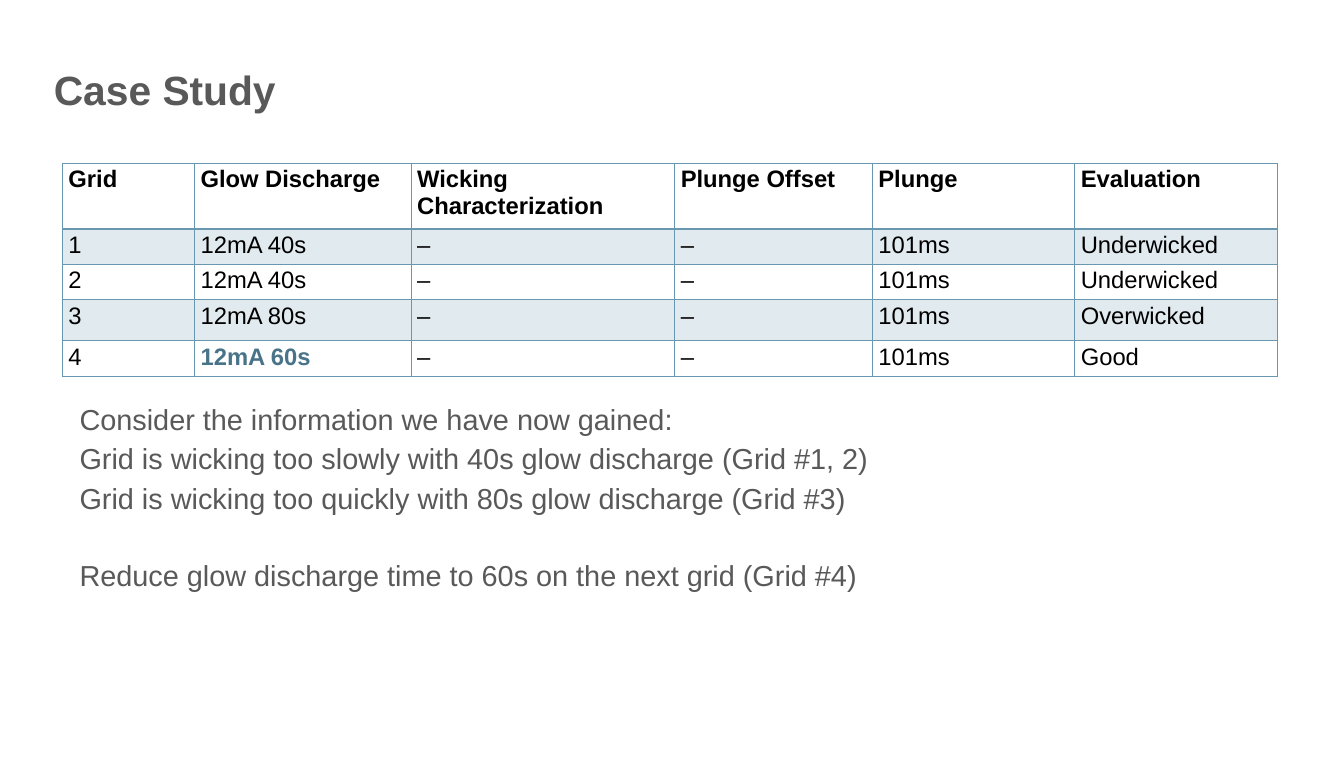
"""Build the case study slide on grid wicking and glow discharge."""
from lxml.etree import SubElement
from pptx import Presentation
from pptx.dml.color import RGBColor
from pptx.enum.text import MSO_ANCHOR
from pptx.oxml.ns import qn
from pptx.util import Pt

COLORS = {"grey": "595959", "black": "000000", "line": "6997AF", "accent": "497389"}
COLUMN_WIDTHS = [155.5, 254.9, 310.3, 232.6, 238.3, 238.3]
ROW_HEIGHTS = [77, 41.8, 41.8, 48.2, 41.8]
HEADINGS = ["Grid", "Glow Discharge", "Wicking Characterization",
            "Plunge Offset", "Plunge", "Evaluation"]
TRIALS = [("12mA 40s", "Underwicked"), ("12mA 40s", "Underwicked"),
          ("12mA 80s", "Overwicked"), ("12mA 60s", "Good")]
FINDINGS = [
    ("Consider the information we have now gained:", 0),
    ("Grid is wicking too slowly with 40s glow discharge (Grid #1, 2)", 9.5),
    ("Grid is wicking too quickly with 80s glow discharge (Grid #3)", 9.5),
    ("Reduce glow discharge time to 60s on the next grid (Grid #4)", 54.2),
]


class Page:
    def __init__(self, deck):
        self.shapes = deck.slides.add_slide(deck.slide_layouts[6]).shapes
        self.font_name = "Arial"

    def style(self, paragraph, size, color, bold=False):
        font = paragraph.font
        font.name, font.size, font.bold = self.font_name, Pt(size), bold
        font.color.rgb = RGBColor.from_string(COLORS[color])

    def text(self, left, top, width, height, lines, size, bold=False,
             anchor=MSO_ANCHOR.TOP, margins=(7.2, 3.6)):
        box = self.shapes.add_textbox(Pt(left), Pt(top), Pt(width), Pt(height))
        frame = box.text_frame
        frame.word_wrap = True
        frame.vertical_anchor = anchor
        frame.margin_left = frame.margin_right = Pt(margins[0])
        frame.margin_top = frame.margin_bottom = Pt(margins[1])
        for index, (words, gap) in enumerate(lines):
            paragraph = frame.add_paragraph() if index else frame.paragraphs[0]
            paragraph.text = words
            paragraph.line_spacing = 0.9
            paragraph.space_before = Pt(gap)
            self.style(paragraph, size, "grey", bold)

    def border(self, cell, side, width):
        line = SubElement(cell._tc.get_or_add_tcPr(), qn(f"a:ln{side}"), w=str(Pt(width)))
        fill = SubElement(line, qn("a:solidFill"))
        SubElement(fill, qn("a:srgbClr"), val=COLORS["line"])

    def shade(self, cell):
        cell.fill.solid()
        cell.fill.fore_color.rgb = RGBColor.from_string(COLORS["line"])
        color = cell._tc.tcPr.find(f".//{qn('a:solidFill')}[last()]")
        color = cell._tc.tcPr.find(qn("a:solidFill")).find(qn("a:srgbClr"))
        SubElement(color, qn("a:alpha"), val="20000")

    def table(self, left, top, widths, heights, rows, highlight):
        frame = self.shapes.add_table(len(rows), len(widths), Pt(left), Pt(top),
                                      Pt(sum(widths)), Pt(sum(heights)))
        table = frame.table
        table.first_row = table.horz_banding = False
        for column, width in zip(table.columns, widths):
            column.width = Pt(width)
        for row, height in zip(table.rows, heights):
            row.height = Pt(height)
        for row, values in enumerate(rows):
            for column, value in enumerate(values):
                cell = table.cell(row, column)
                cell.text = value
                marked = (row, column) == highlight
                self.style(cell.text_frame.paragraphs[0], 28,
                           "accent" if marked else "black", marked or row == 0)
                self.border(cell, "L", 1)
                self.border(cell, "R", 1)
                self.border(cell, "T", 2 if row == 1 else 1)
                self.border(cell, "B", 2 if row == 0 else 1)
                if row % 2:
                    self.shade(cell)
                else:
                    cell.fill.background()


def main():
    deck = Presentation()
    deck.slide_width, deck.slide_height = Pt(1581.84), Pt(890.64)
    page = Page(deck)
    page.text(56.2, 57.6, 1046.2, 79.9, [("Case Study", 0)], 48, True, MSO_ANCHOR.BOTTOM)
    page.text(79.2, 470, 1171.4, 234.7, FINDINGS, 34, margins=(14.4, 7.2))
    rows = [HEADINGS] + [[str(number), glow, "–", "–", "101ms", result]
                         for number, (glow, result) in enumerate(TRIALS, 1)]
    page.table(73.4, 192.2, COLUMN_WIDTHS, ROW_HEIGHTS, rows, highlight=(4, 1))
    deck.save("out.pptx")


if __name__ == "__main__":
    main()
